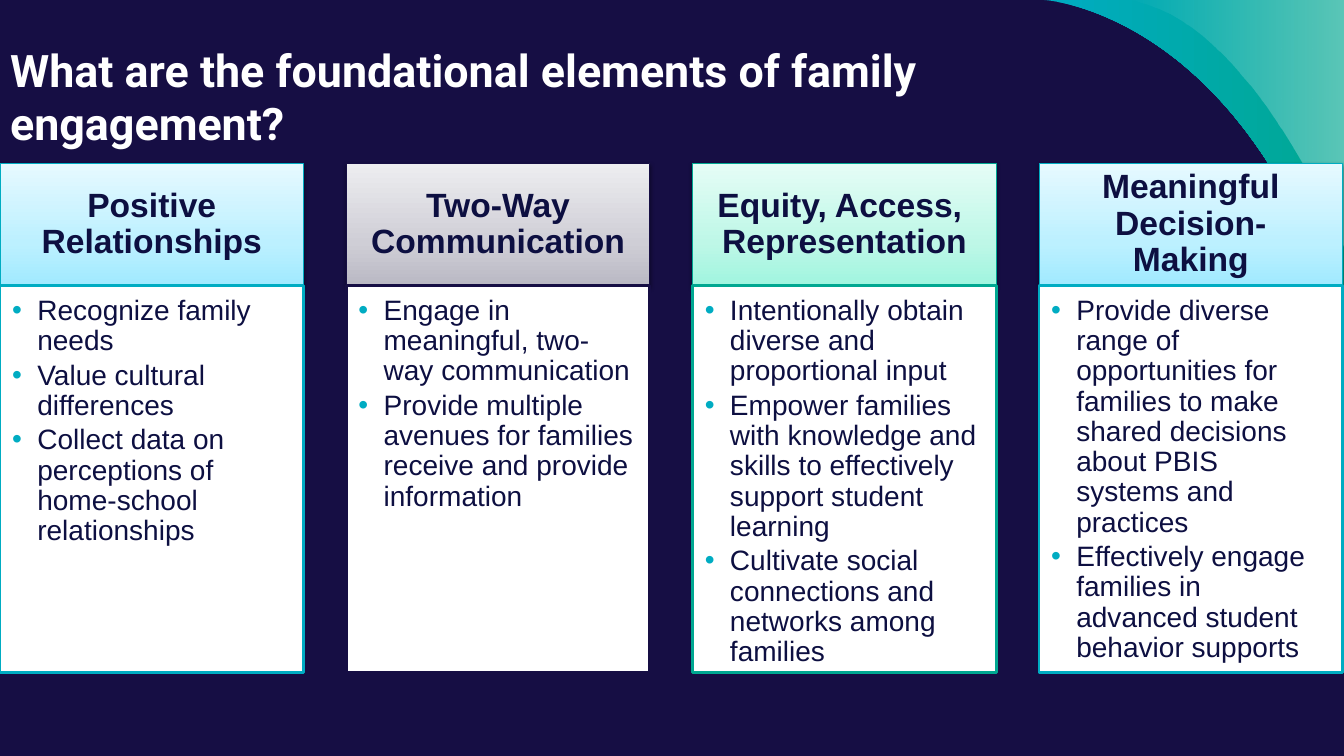
import pptx
import pptx.dml.color
import pptx.enum.shapes
import pptx.enum.text
import pptx.oxml
import pptx.oxml.ns
import pptx.util
from lxml import etree
from pptx.util import Inches

COLORS = {
    "night": "160E44", "ink": "0D0F41", "white": "FFFFFF",
    "black": "000000", "cyan": "00ACC2", "green": "00A791",
}
CYAN_TINT = [(0, "A1EAFF"), (35, "BCF0FF"), (100, "E6F9FF")]
GREY_TINT = [(0, "BAB9C4"), (35, "CFCED6"), (100, "EDEDF0")]
GREEN_TINT = [(0, "A0F5DF"), (35, "BEF7E7"), (100, "E5FDF6")]

TITLE = "What are the foundational elements of family engagement?"
COLUMNS = [
    ("Positive Relationships", "cyan", CYAN_TINT, [
        "Recognize family needs",
        "Value cultural differences",
        "Collect data on perceptions of home-school relationships"]),
    ("Two-Way Communication", "night", GREY_TINT, [
        "Engage in meaningful, two-way communication",
        "Provide multiple avenues for families receive and provide information"]),
    ("Equity, Access,  Representation", "green", GREEN_TINT, [
        "Intentionally obtain diverse and proportional input",
        "Empower families with knowledge and skills to effectively support student learning",
        "Cultivate social connections and networks among families"]),
    ("Meaningful Decision-Making", "cyan", CYAN_TINT, [
        "Provide diverse range of opportunities for families to make shared decisions "
        "about PBIS systems and practices",
        "Effectively engage families in advanced student behavior supports"]),
]
# Each swoosh: Bezier points from the top edge to the right edge, gradient stops
SWOOSHES = [
    ([(10.36, 0), (10.36, 0), (12.37, 0.11), (13.33, 3.31)],
     [(0, COLORS["cyan"]), (100, COLORS["green"])]),
    ([(11.16, 0), (12.41, 0.15), (13.33, 2.45), (13.33, 2.45)],
     [(0, COLORS["white"], 0), (100, COLORS["white"], 36)]),
]

WIDTH, HEIGHT = 13.33, 7.5
COLUMN_STEP, COLUMN_WIDTH = 3.435, 3.01
HEADER_TOP, HEADER_HEIGHT, LIST_HEIGHT = 1.62, 1.21, 3.84


def rgb(name):
    return pptx.dml.color.RGBColor.from_string(COLORS[name])


def add_element(parent, tag, **attributes):
    return etree.SubElement(parent, pptx.oxml.ns.qn(tag), attributes)


def add_color(parent, value, alpha=100):
    color = add_element(parent, "a:srgbClr", val=value)
    if alpha < 100:
        add_element(color, "a:alpha", val=str(alpha * 1000))


def set_gradient(shape, stops, angle):
    """Fill with (percent, hex, optional alpha) stops; angle is counter-clockwise."""
    shape.fill.gradient()
    shape.fill.gradient_angle = angle
    stop_list = shape._element.spPr.find(".//" + pptx.oxml.ns.qn("a:gsLst"))
    for old_stop in list(stop_list):
        stop_list.remove(old_stop)
    for percent, *color in stops:
        add_color(add_element(stop_list, "a:gs", pos=str(percent * 1000)), *color)


def add_swoosh(page, curve, stops):
    points = [(Inches(x), Inches(y)) for x, y in curve]
    builder = page.shapes.build_freeform(*points[0], scale=1.0)
    builder.add_line_segments(points[1:] + [(Inches(WIDTH), 0)], close=True)
    swoosh = builder.convert_to_shape()
    swoosh.shadow.inherit = False
    swoosh.line.fill.background()
    set_gradient(swoosh, stops, 0)

    # The first three segments become one Bezier curve
    outline = swoosh._element.spPr.find(".//" + pptx.oxml.ns.qn("a:path"))
    segments = outline.findall(pptx.oxml.ns.qn("a:lnTo"))[:3]
    bezier = add_element(outline, "a:cubicBezTo")
    segments[0].addprevious(bezier)
    for segment in segments:
        bezier.append(segment[0])
        outline.remove(segment)


def add_panel(page, left, top, height, outline, line_width):
    panel = page.shapes.add_shape(
        pptx.enum.shapes.MSO_SHAPE.RECTANGLE,
        Inches(left), Inches(top), Inches(COLUMN_WIDTH), Inches(height))
    panel.shadow.inherit = False
    panel.line.color.rgb = rgb(outline)
    panel.line.width = pptx.util.Pt(line_width)
    return panel


def set_frame(frame, insets, anchor="TOP"):
    frame.word_wrap = True
    frame.auto_size = pptx.enum.text.MSO_AUTO_SIZE.NONE
    frame.vertical_anchor = pptx.enum.text.MSO_ANCHOR[anchor]
    (frame.margin_left, frame.margin_top,
     frame.margin_right, frame.margin_bottom) = map(Inches, insets)


def set_font(para, size, color, name="Arial", bold=False):
    for span in para.runs:
        span.font.name = name
        span.font.size = pptx.util.Pt(size)
        span.font.bold = bold
        span.font.color.rgb = rgb(color)


def add_header(page, left, text, outline, tint):
    header = add_panel(page, left, HEADER_TOP, HEADER_HEIGHT, outline, 0.75)
    set_gradient(header, tint, 90)
    effects = header._element.spPr.find(pptx.oxml.ns.qn("a:effectLst"))
    shadow = add_element(effects, "a:outerShdw", blurRad=str(pptx.util.Pt(3.1)),
                         dist=str(pptx.util.Pt(1.6)), dir="5400000", rotWithShape="0")
    add_color(shadow, COLORS["black"], 38)
    set_frame(header.text_frame, (0.19, 0.11, 0.19, 0.11), "MIDDLE")
    header.text_frame.text = text
    para = header.text_frame.paragraphs[0]
    para.alignment = pptx.enum.text.PP_ALIGN.CENTER
    para.line_spacing = 0.9
    set_font(para, 24, "ink", bold=True)


def add_list(page, left, items, outline):
    panel = add_panel(page, left, HEADER_TOP + HEADER_HEIGHT, LIST_HEIGHT, outline, 2)
    panel.fill.solid()
    panel.fill.fore_color.rgb = rgb("white")
    set_frame(panel.text_frame, (0.12, 0.11, 0.16, 0.17))
    panel.text_frame.text = "\n".join(items)
    for para in panel.text_frame.paragraphs:
        properties = para._p.get_or_add_pPr()
        properties.set("marL", str(Inches(0.25)))
        properties.set("indent", str(-Inches(0.25)))
        add_color(add_element(properties, "a:buClr"), COLORS["cyan"])
        add_element(properties, "a:buFont", typeface="Arial")
        add_element(properties, "a:buChar", char="•")
        para.alignment = pptx.enum.text.PP_ALIGN.LEFT
        para.line_spacing = 0.9
        para.space_after = pptx.util.Pt(3)
        set_font(para, 20, "ink")


def main():
    deck = pptx.Presentation()
    deck.slide_width, deck.slide_height = Inches(WIDTH), Inches(HEIGHT)
    page = deck.slides.add_slide(deck.slide_layouts.get_by_name("Title Only"))
    page.background.fill.solid()
    page.background.fill.fore_color.rgb = rgb("night")

    for curve, stops in SWOOSHES:
        add_swoosh(page, curve, stops)

    title = page.shapes.title
    title.left, title.top, title.width, title.height = map(Inches, (0, 0.32, 11.89, 0.92))
    set_frame(title.text_frame, (0.1, 0.1, 0.1, 0.1))
    title.text_frame.text = TITLE
    title.text_frame.paragraphs[0].alignment = pptx.enum.text.PP_ALIGN.LEFT
    set_font(title.text_frame.paragraphs[0], 32, "white", "Roboto", True)

    for index, (heading, outline, tint, items) in enumerate(COLUMNS):
        left = index * COLUMN_STEP
        add_header(page, left, heading, outline, tint)
        add_list(page, left, items, outline)

    deck.save("out.pptx")


if __name__ == "__main__":
    main()
